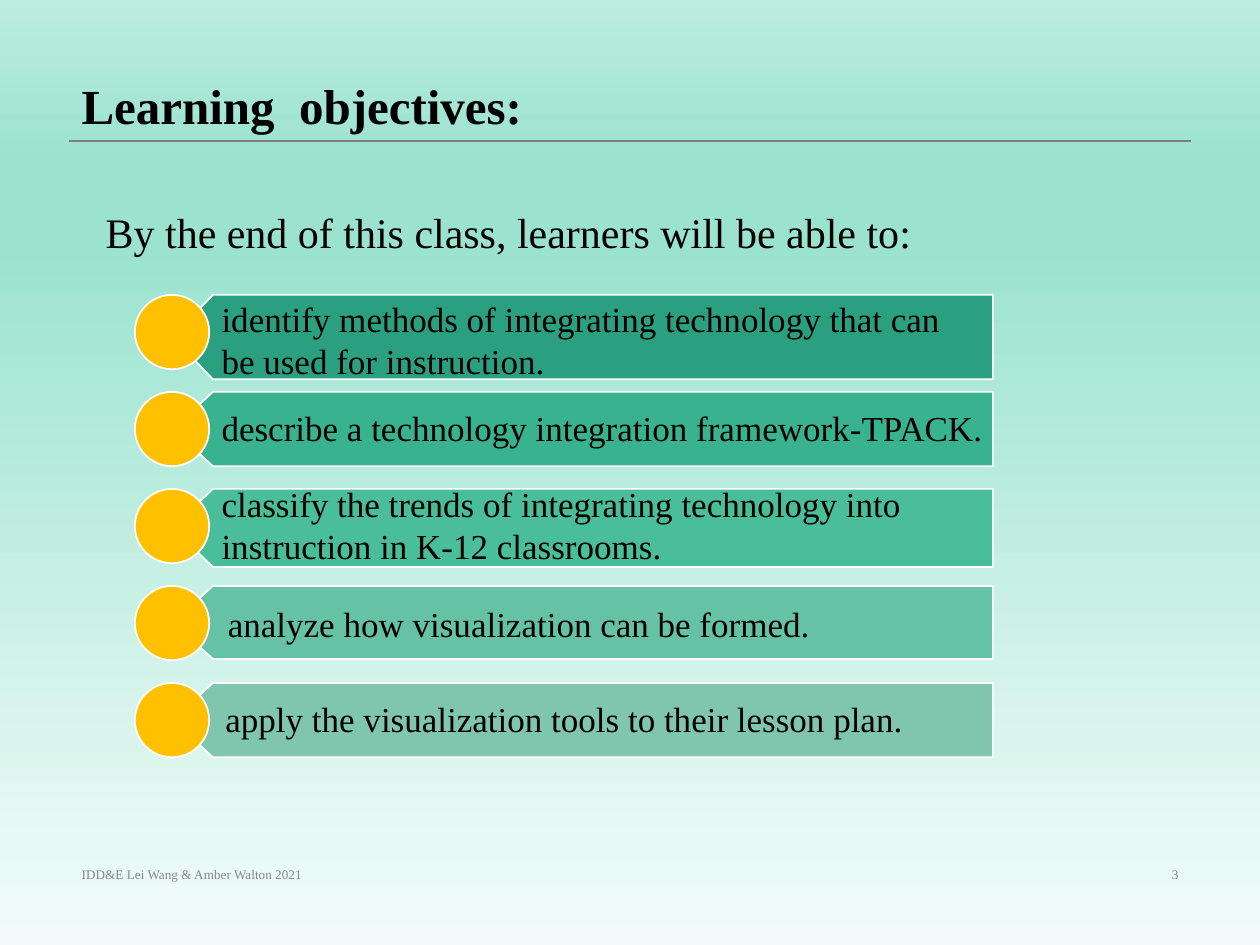
from dataclasses import dataclass

from lxml.etree import SubElement
from pptx import Presentation
from pptx.dml.color import RGBColor as RGB
from pptx.enum.shapes import MSO_CONNECTOR as Connector, MSO_SHAPE as Shape
from pptx.enum.text import MSO_ANCHOR as Anchor, PP_ALIGN as Align
from pptx.oxml.ns import qn
from pptx.util import Inches, Pt

WIDTH, HEIGHT = 10, 7.5


@dataclass(frozen=True)
class Theme:
    font: str = "Times New Roman"
    ink: str = "000000"
    muted: str = "888888"
    rule: str = "7F7F7F"
    outline: str = "FFFFFF"
    dot: str = "FFC000"
    title_size: float = 28
    intro_size: float = 24
    objective_size: float = 20
    footer_size: float = 7.5
    # Background stops run from the bottom of the slide to the top
    background: tuple = ((0, "F2FBFA"), (11, "E7F9F4"), (22, "DAF5ED"),
                         (74, "9BE3CF"), (83, "9BE3CF"), (100, "BCECDF"))


THEME = Theme()


@dataclass(frozen=True)
class Objective:
    wording: str
    colour: str
    bar_height: float
    indent: float      # label start, from the right edge of the dot
    label_drop: float  # label top, from the top of the row
    label_width: float = 6.22
    label_height: float = 0.44


OBJECTIVES = (
    Objective("identify methods of integrating technology that can be used for instruction.",
              "2BA081", 0.67, 0, -0.03, label_height=0.77),
    Objective("describe a technology integration framework-TPACK.",
              "38B28F", 0.59, 0, 0.07, label_width=6.62),
    Objective("classify the trends of integrating technology into instruction in K-12 classrooms.",
              "4ABE9B", 0.62, 0, -0.1, label_height=0.77),
    Objective("analyze how visualization can be formed.",
              "65C2A4", 0.58, 0.05, 0.08),
    Objective("apply the visualization tools to their lesson plan.",
              "80C6AE", 0.59, 0.03, 0.07),
)


def add_text(slide, box, wording, size, colour=THEME.ink, bold=False,
             anchor=Anchor.TOP, align=Align.LEFT, spacing=None):
    frame = slide.shapes.add_textbox(*map(Inches, box)).text_frame
    frame.word_wrap = True
    frame.vertical_anchor = anchor
    frame.text = wording
    paragraph = frame.paragraphs[0]
    paragraph.alignment = align
    paragraph.line_spacing = spacing
    font = paragraph.runs[0].font
    font.name, font.size, font.bold = THEME.font, Pt(size), bold
    font.color.rgb = RGB.from_string(colour)


def paint(shape, colour):
    shape.shadow.inherit = False
    shape.fill.solid()
    shape.fill.fore_color.rgb = RGB.from_string(colour)
    shape.line.color.rgb = RGB.from_string(THEME.outline)
    shape.line.width = Pt(1)


def paint_background(slide):
    fill = slide.background.fill
    fill.gradient()
    fill.gradient_angle = 90
    stops = next(slide.element.iter(qn("a:gsLst")))
    for stop in list(stops):
        stops.remove(stop)
    for percent, colour in THEME.background:
        stop = SubElement(stops, qn("a:gs"), pos=str(percent * 1000))
        SubElement(stop, qn("a:srgbClr"), val=colour)


def add_header(slide, box):
    left, top, width, height = box
    add_text(slide, box, "Learning  objectives:", THEME.title_size,
             bold=True, anchor=Anchor.BOTTOM, spacing=0.9)
    # Rule under the title
    ends = (left, top + height, left + width, top + height)
    rule = slide.shapes.add_connector(Connector.STRAIGHT, *map(Inches, ends))
    rule.line.color.rgb = RGB.from_string(THEME.rule)
    rule.line.width = Pt(0.75)
    SubElement(rule.element.spPr, qn("a:effectLst"))


def add_objective(slide, box, objective):
    left, top, width, dot_size = box
    dot_right = left + dot_size
    # Bar with its point behind the dot
    tip, shoulder, right = left + 0.3, left + 0.62, left + width
    bottom = top + objective.bar_height
    outline = ((shoulder, bottom), (tip, (top + bottom) / 2),
               (shoulder, top), (right, top))
    builder = slide.shapes.build_freeform(Inches(right), Inches(bottom))
    builder.add_line_segments([(Inches(x), Inches(y)) for x, y in outline])
    paint(builder.convert_to_shape(), objective.colour)
    # Dot
    dot_box = (left, top, dot_size, dot_size)
    paint(slide.shapes.add_shape(Shape.OVAL, *map(Inches, dot_box)), THEME.dot)
    # Label
    label_box = (dot_right + objective.indent, top + objective.label_drop,
                 objective.label_width, objective.label_height)
    add_text(slide, label_box, objective.wording, THEME.objective_size)


def add_objectives(slide, box):
    left, top, width, height = box
    dot_size = 0.59
    pitch = (height - dot_size) / (len(OBJECTIVES) - 1)
    for row, objective in enumerate(OBJECTIVES):
        add_objective(slide, (left, top + row * pitch, width, dot_size), objective)


def add_footer(slide, box):
    left, top, width, height = box
    credit_width, number_width = 3.4, 2.39
    add_text(slide, (left, top, credit_width, height),
             "IDD&E Lei Wang & Amber Walton 2021", THEME.footer_size,
             THEME.muted, anchor=Anchor.MIDDLE)
    add_text(slide, (left + width - number_width, top, number_width, height),
             "3", THEME.footer_size, THEME.muted,
             anchor=Anchor.MIDDLE, align=Align.RIGHT)


def main():
    deck = Presentation()
    deck.slide_width, deck.slide_height = Inches(WIDTH), Inches(HEIGHT)
    slide = deck.slides.add_slide(deck.slide_layouts[6])
    margin = 0.055 * WIDTH
    content_width = WIDTH - 2 * margin

    paint_background(slide)
    add_header(slide, (margin, 0, content_width, 1.12))
    add_text(slide, (0.74, 1.59, 8.61, 0.5),
             "By the end of this class, learners will be able to:",
             THEME.intro_size)
    add_objectives(slide, (1.07, 2.34, 6.81, 3.67))
    add_footer(slide, (margin, 6.82, content_width, 0.23))
    deck.save("out.pptx")


if __name__ == "__main__":
    main()
